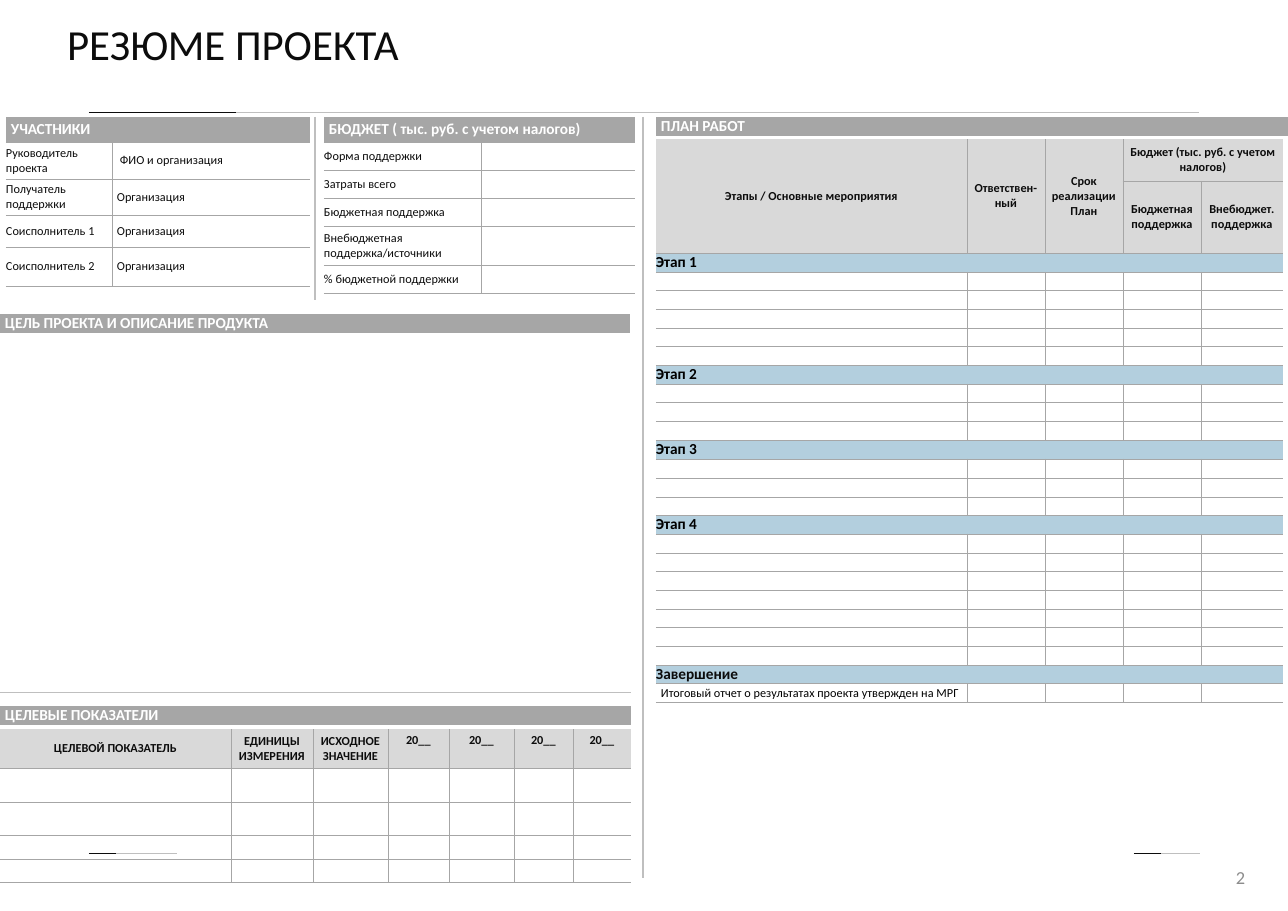
from dataclasses import dataclass, replace
from itertools import pairwise, product
from typing import Optional

import pptx
import pptx.dml.color
import pptx.enum.shapes
import pptx.enum.text
import pptx.oxml
import pptx.oxml.ns
import pptx.util

RGB = pptx.dml.color.RGBColor
ALIGN = pptx.enum.text.PP_ALIGN
ANCHOR = pptx.enum.text.MSO_ANCHOR

PX = 8300  # EMU in one px
FONT = "Calibri"
WHITE = RGB(0xFF, 0xFF, 0xFF)
BLACK = RGB(0, 0, 0)
INK = RGB(0x0C, 0x0C, 0x0C)
BAR = RGB(0xA6, 0xA6, 0xA6)
HEAD = RGB(0xD9, 0xD9, 0xD9)
STAGE = RGB(0xB3, 0xCF, 0xDE)
PALE = RGB(0xBF, 0xBF, 0xBF)
PAGE = RGB(0x8C, 0x8C, 0x8C)


@dataclass(frozen=True)
class Cell:
    text: str = ""
    size: int = 8
    bold: bool = False
    color: RGB = INK
    fill: Optional[RGB] = WHITE
    align: ALIGN = ALIGN.LEFT
    anchor: ANCHOR = ANCHOR.MIDDLE
    margins: tuple[int, int, int, int] = (0, 0, 0, 0)
    rows: int = 1
    cols: int = 1


@dataclass(frozen=True)
class Grid:
    x: int
    y: int
    widths: list[int]
    heights: list[int]
    cells: list[list[Optional[Cell]]]  # None lies under a merged cell
    rule: Optional[RGB] = BAR


@dataclass(frozen=True)
class Line:
    x1: int
    y1: int
    x2: int
    y2: int
    color: RGB = PALE
    width: float = 0.5


def px(n: int) -> int:
    return pptx.util.Emu(n * PX)


def write(tf, text: str, *, size: int, color: RGB, bold: bool = False,
          align: ALIGN = ALIGN.LEFT, anchor: ANCHOR = ANCHOR.MIDDLE,
          spacing: Optional[float] = None) -> None:
    tf.word_wrap = True
    tf.vertical_anchor = anchor
    for i, line in enumerate(text.split("\n")):
        p = tf.paragraphs[0] if i == 0 else tf.add_paragraph()
        p.alignment = align
        p.line_spacing = spacing
        r = p.add_run()
        r.text = line
        r.font.name, r.font.size, r.font.bold = FONT, pptx.util.Pt(size), bold
        r.font.color.rgb = color


def draw_line(s, line: Line) -> None:
    c = s.shapes.add_connector(pptx.enum.shapes.MSO_CONNECTOR.STRAIGHT,
                               px(line.x1), px(line.y1), px(line.x2), px(line.y2))
    c.line.color.rgb = line.color
    c.line.width = pptx.util.Pt(line.width)
    c._element.spPr.append(pptx.oxml.parse_xml(
        f"<a:effectLst {pptx.oxml.ns.nsdecls('a')}/>"))


def set_borders(cell, sides: dict[str, Optional[RGB]]) -> None:
    tcPr = cell._tc.get_or_add_tcPr()
    for i, (side, color) in enumerate(sides.items()):
        fill = (f'<a:solidFill><a:srgbClr val="{color}"/></a:solidFill>'
                if color else "<a:noFill/>")
        tcPr.insert(i, pptx.oxml.parse_xml(
            f'<a:ln{side} {pptx.oxml.ns.nsdecls("a")} w="3175">{fill}</a:ln{side}>'))


def fill_cell(tc, cell: Cell) -> None:
    tc.margin_left, tc.margin_top, tc.margin_right, tc.margin_bottom = map(px, cell.margins)
    tc.vertical_anchor = cell.anchor
    if cell.fill is None:
        tc.fill.background()
    else:
        tc.fill.solid()
        tc.fill.fore_color.rgb = cell.fill
    if cell.text:
        write(tc.text_frame, cell.text, size=cell.size, color=cell.color,
              bold=cell.bold, align=cell.align, anchor=cell.anchor)
    else:
        end = tc.text_frame.paragraphs[0]._p.get_or_add_endParaRPr()
        end.set("sz", str(cell.size * 100))


def draw_grid(s, g: Grid) -> None:
    n_rows, n_cols = len(g.heights), len(g.widths)
    tb = s.shapes.add_table(n_rows, n_cols, px(g.x), px(g.y),
                            px(sum(g.widths)), px(sum(g.heights))).table
    tb.first_row = tb.horz_banding = False
    for col, w in zip(tb.columns, g.widths):
        col.width = px(w)
    for row, h in zip(tb.rows, g.heights):
        row.height = px(h)
    owner = {}
    for r, c in product(range(n_rows), range(n_cols)):
        cell = g.cells[r][c]
        fill_cell(tb.cell(r, c), cell or Cell())
        if cell:
            for dr, dc in product(range(cell.rows), range(cell.cols)):
                owner[r + dr, c + dc] = (r, c)
            if cell.rows * cell.cols > 1:
                tb.cell(r, c).merge(tb.cell(r + cell.rows - 1, c + cell.cols - 1))
    # Rules run between cells and below the last row
    for (r, c), own in owner.items():
        near = {"L": (r, c - 1), "R": (r, c + 1), "T": (r - 1, c), "B": (r + 1, c)}
        set_borders(tb.cell(r, c), {
            side: g.rule if owner.get(at, "below" if side == "B" else own) != own else None
            for side, at in near.items()})


def bar(text: str, cols: int = 1) -> Cell:
    return Cell(text, 10, True, WHITE, BAR, margins=(5, 0, 5, 0), cols=cols)


def head(text: str, pad: int, **kw) -> Cell:
    return Cell(text, bold=True, fill=HEAD, align=ALIGN.CENTER,
                margins=(5, pad, 5, pad), **kw)


# Participants
value = Cell("Организация", margins=(5, 3, 5, 3))
people = [("Руководитель проекта", replace(value, text="ФИО и организация", margins=(8, 3, 5, 3))),
          ("Получатель поддержки", value),
          ("Соисполнитель 1", value), ("Соисполнитель 2", value)]
participants = Grid(6, 117, [106, 198], [25, 37, 36, 32, 39],
                    [[bar("УЧАСТНИКИ", 2), None]]
                    + [[Cell(role, margins=(0, 3, 5, 3)), who] for role, who in people])

# Budget
budget_items = ["Форма поддержки", "Затраты всего", "Бюджетная поддержка",
                "Внебюджетная поддержка/источники", "% бюджетной поддержки"]
budget = Grid(324, 117, [157, 154], [25, 28, 28, 28, 39, 28],
              [[bar("БЮДЖЕТ ( тыс. руб. с учетом налогов)", 2), None]]
              + [[Cell(item, margins=(0, 4, 5, 4)), Cell()] for item in budget_items])

# Work plan: two header rows, then stages of equal rows
plan_rows = [
    [head("Этапы / Основные мероприятия", 6, rows=2), head("Ответствен-ный", 6, rows=2),
     head("Срок реализации\nПлан", 6, rows=2),
     head("Бюджет (тыс. руб. с учетом налогов)", 6, cols=2), None],
    [None, None, None, head("Бюджетная поддержка", 6), head("Внебюджет. поддержка", 6)]]
report = Cell("Итоговый отчет о результатах проекта утвержден на МРГ",
              color=BLACK, margins=(5, 0, 0, 0))
stages = [("Этап 1", BLACK, [Cell()] * 5), ("Этап 2", BLACK, [Cell()] * 3),
          ("Этап 3", BLACK, [Cell()] * 3), ("Этап 4", BLACK, [Cell()] * 7),
          ("Завершение", INK, [report])]
for name, color, tasks in stages:
    plan_rows.append([Cell(name, 10, True, color, STAGE, cols=5)] + [None] * 4)
    plan_rows += [[task] + [Cell()] * 4 for task in tasks]
n_lines = len(plan_rows) - 2
edges = [round(448 * i / n_lines) for i in range(n_lines + 1)]
plan = Grid(656, 139, [311, 78, 78, 78, 82],
            [42, 72] + [b - a for a, b in pairwise(edges)], plan_rows)

# Target indicators
indicator_heads = [head(t, 4) for t in
                   ("ЦЕЛЕВОЙ ПОКАЗАТЕЛЬ", "ЕДИНИЦЫ ИЗМЕРЕНИЯ", "ИСХОДНОЕ ЗНАЧЕНИЕ")]
indicators = Grid(0, 729, [231, 82, 75, 61, 65, 59, 58], [39, 34, 33, 24, 23],
                  [indicator_heads + [head("20__", 4, anchor=ANCHOR.TOP)] * 4]
                  + [[Cell(fill=None)] * 7] * 4)

GRIDS = [
    participants,
    budget,
    Grid(0, 333, [631], [359], [[Cell()]], PALE),
    Grid(0, 314, [630], [19], [[bar("ЦЕЛЬ ПРОЕКТА И ОПИСАНИЕ ПРОДУКТА")]], None),
    Grid(656, 117, [632], [19], [[bar("ПЛАН РАБОТ")]], None),
    plan,
    Grid(0, 706, [631], [19], [[bar("ЦЕЛЕВЫЕ ПОКАЗАТЕЛИ")]], None),
    indicators,
]
ACCENTS = [Line(89, 112, 1199, 112), Line(89, 112, 236, 112, INK),
           Line(1134, 853, 1200, 853), Line(1134, 853, 1161, 853, INK),
           Line(89, 853, 177, 853), Line(89, 853, 116, 853, INK)]
DIVIDERS = [Line(315, 117, 315, 300, width=0.75), Line(643, 117, 643, 878, width=0.75)]


def main() -> None:
    prs = pptx.Presentation()
    prs.slide_width, prs.slide_height = px(1288), px(911)
    s = prs.slides.add_slide(prs.slide_layouts[5])

    for line in ACCENTS:
        draw_line(s, line)

    # Title
    sp = s.shapes.title
    sp.left, sp.top, sp.width, sp.height = map(px, (56, 18, 1115, 86))
    write(sp.text_frame, "РЕЗЮМЕ ПРОЕКТА", size=28, color=INK,
          anchor=ANCHOR.TOP, spacing=0.9)

    for g in GRIDS:
        draw_grid(s, g)
    for line in DIVIDERS:
        draw_line(s, line)

    # Page number
    sp = s.shapes.add_textbox(*map(px, (966, 853, 290, 48)))
    write(sp.text_frame, "2", size=12, color=PAGE, align=ALIGN.RIGHT)
    prs.save("out.pptx")


if __name__ == "__main__":
    main()
